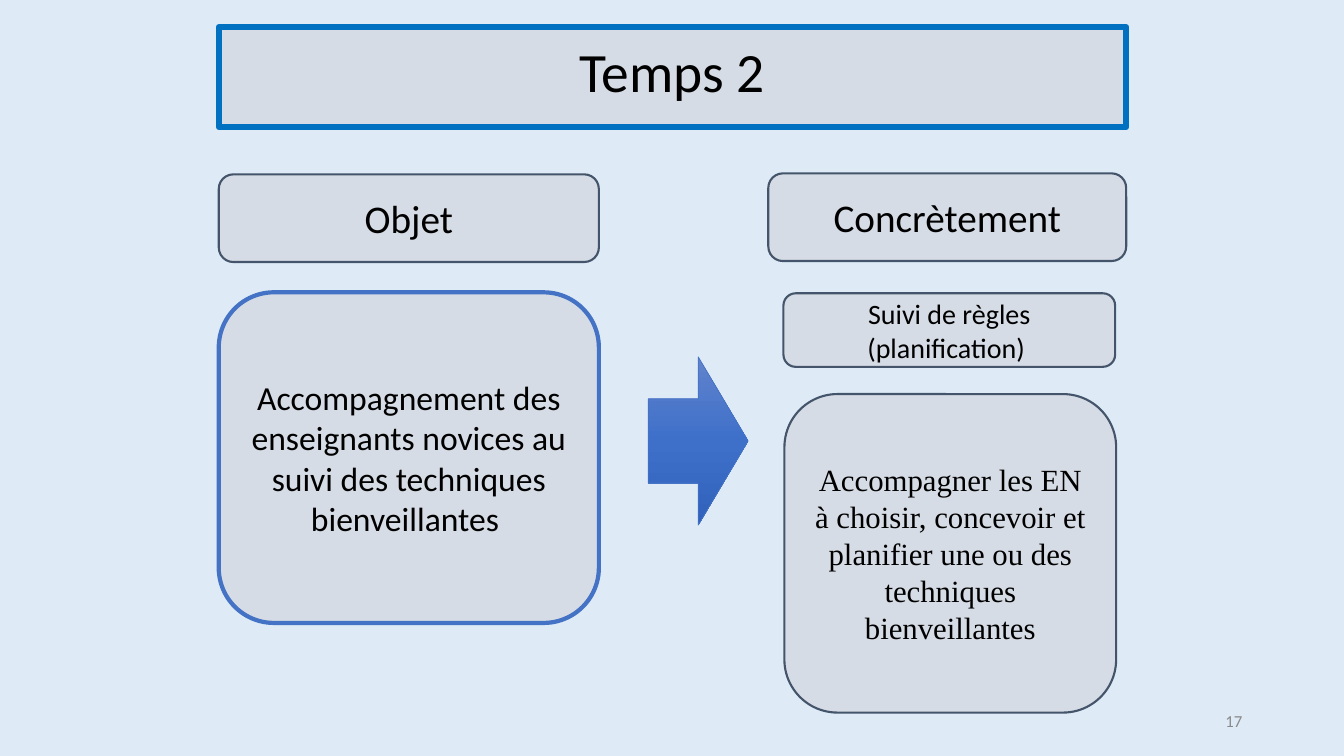
from copy import deepcopy

from pptx import Presentation
from pptx.dml.color import RGBColor
from pptx.enum.shapes import MSO_SHAPE
from pptx.enum.text import MSO_ANCHOR, PP_ALIGN
from pptx.util import Inches, Pt

RECT = MSO_SHAPE.RECTANGLE
ROUND = MSO_SHAPE.ROUNDED_RECTANGLE
ARROW = MSO_SHAPE.RIGHT_ARROW
MIDDLE = MSO_ANCHOR.MIDDLE
CENTER, RIGHT = PP_ALIGN.CENTER, PP_ALIGN.RIGHT

SKY = RGBColor(0xDE, 0xEB, 0xF7)
PALE = RGBColor(0xD6, 0xDC, 0xE5)
AZURE = RGBColor(0x00, 0x70, 0xC0)
BLUE = RGBColor(0x44, 0x72, 0xC4)
SLATE = RGBColor(0x44, 0x54, 0x6A)
BLACK = RGBColor(0x00, 0x00, 0x00)
GRAY = RGBColor(0x89, 0x89, 0x89)
SHADES = (
    (0, RGBColor(0x61, 0x83, 0xCB)),
    (0.5, RGBColor(0x3E, 0x70, 0xCA)),
    (1, RGBColor(0x30, 0x62, 0xBB)),
)


def write(shape, text, size=24, font="Calibri", color=BLACK, align=CENTER, space=None):
    frame = shape.text_frame
    frame.word_wrap = True
    frame.vertical_anchor = MIDDLE
    para = frame.paragraphs[0]
    para.alignment = align
    para.line_spacing = space
    run = para.add_run()
    run.text = text
    run.font.size = Pt(size)
    run.font.name = font
    run.font.color.rgb = color
    return frame


class Board:
    def __init__(self, slide, fill=PALE):
        self.slide = slide
        self.fill = fill
        back = slide.background.fill
        back.solid()
        back.fore_color.rgb = SKY

    def shape(self, kind, at, line, width):
        item = self.slide.shapes.add_shape(kind, *map(Inches, at))
        item.shadow.inherit = False
        item.line.color.rgb = line
        item.line.width = Pt(width)
        return item

    def box(self, at, text, kind=ROUND, line=SLATE, width=1.5, **style):
        item = self.shape(kind, at, line, width)
        item.fill.solid()
        item.fill.fore_color.rgb = self.fill
        return write(item, text, **style)

    def arrow(self, at):
        item = self.shape(ARROW, at, BLUE, 0.5)
        item.fill.gradient()
        item.fill.gradient_angle = 270
        stops = item.fill.gradient_stops
        # The default gradient has two stops; add a third
        last = item.element.spPr.xpath("a:gradFill/a:gsLst/a:gs")[-1]
        last.addnext(deepcopy(last))
        stops = item.fill.gradient_stops
        for stop, (place, color) in zip(stops, SHADES):
            stop.position = place
            stop.color.rgb = color

    def label(self, at, text, **style):
        write(self.slide.shapes.add_textbox(*map(Inches, at)), text, **style)


def main():
    deck = Presentation()
    deck.slide_width, deck.slide_height = Inches(13.33), Inches(7.5)
    board = Board(deck.slides.add_slide(deck.slide_layouts[6]))

    # Title and page number
    title = board.box((2.17, 0.27, 9, 0.99), "Temps 2", kind=RECT, line=AZURE,
                      width=4.5, size=39.6, space=0.9)
    title.margin_bottom = Inches(0.1)
    board.label((9.42, 6.95, 3, 0.4), "17", size=12, color=GRAY, align=RIGHT)

    # Left column: purpose
    board.box((2.17, 1.73, 3.77, 0.87), "Objet", size=28)
    board.box((2.17, 2.9, 3.77, 3.28),
              "Accompagnement des enseignants novices au suivi des techniques "
              "bienveillantes ", line=BLUE, width=3)

    # Arrow between the columns
    board.arrow((6.43, 3.54, 0.99, 1.67))

    # Right column: practice
    board.box((7.62, 1.72, 3.55, 0.87), "Concrètement", size=28)
    board.box((7.77, 2.91, 3.29, 0.73), "Suivi de règles (planification) ", size=20)
    board.box((7.78, 3.91, 3.29, 3.16),
              "Accompagner les EN à choisir, concevoir et planifier une ou des "
              "techniques bienveillantes", size=22, font="Times New Roman")

    deck.save("out.pptx")


if __name__ == "__main__":
    main()
